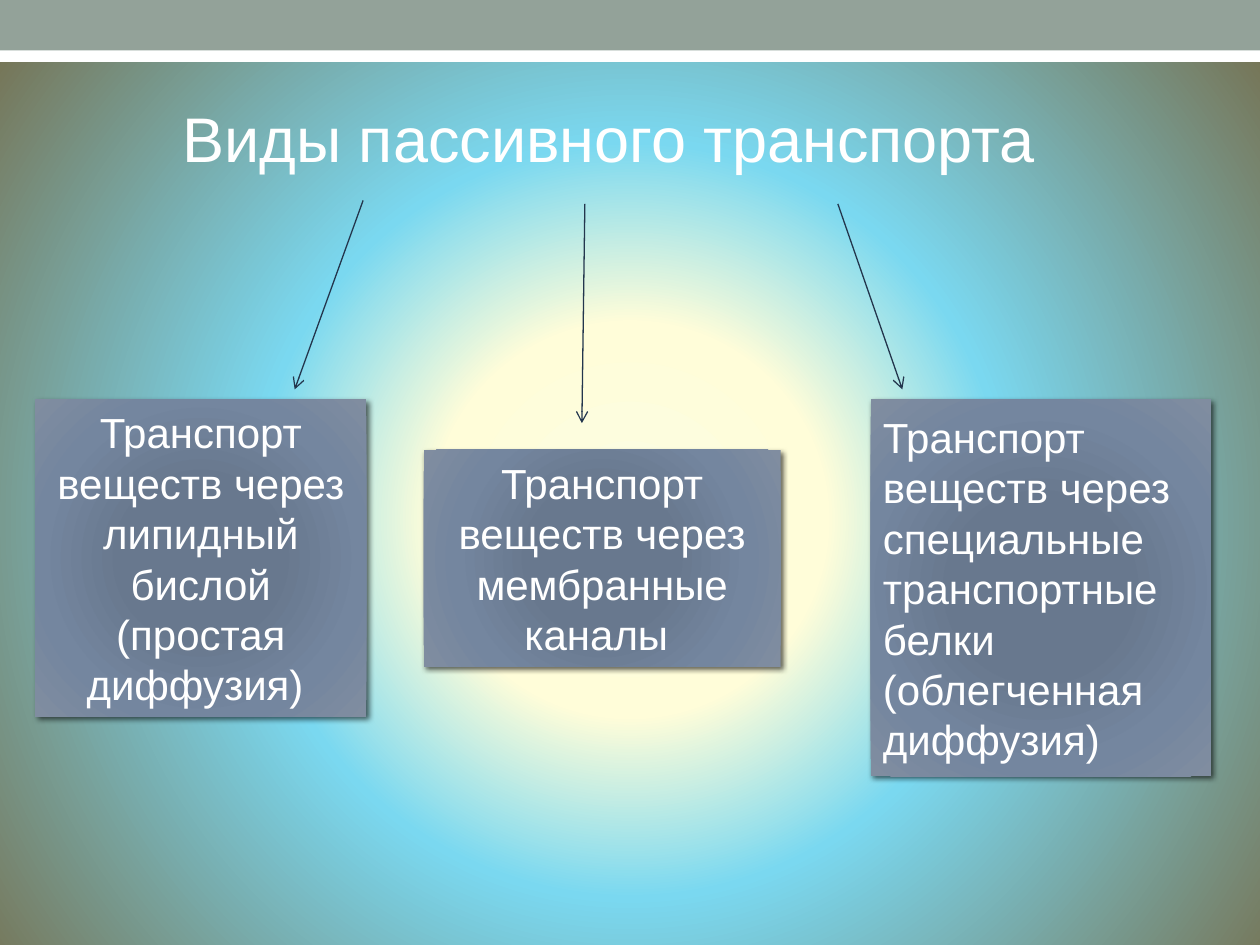
from lxml.etree import SubElement
from pptx import Presentation
from pptx.dml.color import RGBColor
from pptx.enum.shapes import MSO_CONNECTOR as Connector, MSO_SHAPE as Shape
from pptx.enum.text import MSO_AUTO_SIZE as AutoSize, PP_ALIGN as Align
from pptx.oxml.ns import qn
from pptx.util import Cm, Pt

WIDTH, HEIGHT = 25.4, 19.05


def color(hex_value):
    return RGBColor.from_string(hex_value)


def add_element(parent, tag, **attributes):
    return SubElement(parent, qn(tag), {k: str(v) for k, v in attributes.items()})


def radial_gradient(owner, fill, stops, focus):
    """Give the owner's fill a circular gradient around the focus rectangle."""
    fill.gradient()
    gradient = owner.element.find(".//" + qn("a:gradFill"))
    for child in list(gradient):
        gradient.remove(child)
    stop_list = add_element(gradient, "a:gsLst")
    for position, hex_value in stops:
        stop = add_element(stop_list, "a:gs", pos=position * 1000)
        add_element(stop, "a:srgbClr", val=hex_value)
    circle = add_element(gradient, "a:path", path="circle")
    sides = {side: value * 1000 for side, value in zip("ltrb", focus)}
    add_element(circle, "a:fillToRect", **sides)


class Deck:
    font = "Arial"
    text_color = "FFFFFF"
    arrow_color = "23364D"
    background_stops = [(0, "FBFDE3"), (25, "FFFDD9"), (48, "7AD8F0"), (100, "767455")]
    card_stops = [(0, "677790"), (34, "68788E"), (70, "74869F"), (100, "808DA0")]

    def __init__(self, presentation):
        self.slide = presentation.slides.add_slide(presentation.slide_layouts[6])

    def background(self):
        radial_gradient(self.slide, self.slide.background.fill,
                        self.background_stops, (10, 110, 10, 100))

    def rectangle(self, left, top, width, height):
        shape = self.slide.shapes.add_shape(
            Shape.RECTANGLE, Cm(left), Cm(top), Cm(width), Cm(height))
        shape.line.fill.background()
        shape.shadow.inherit = False
        return shape

    def band(self, top, height, hex_value):
        shape = self.rectangle(0, top, WIDTH, height)
        shape.fill.solid()
        shape.fill.fore_color.rgb = color(hex_value)

    def set_text(self, shape, text, size, align):
        frame = shape.text_frame
        frame.word_wrap = True
        frame.auto_size = AutoSize.SHAPE_TO_FIT_TEXT
        paragraph = frame.paragraphs[0]
        paragraph.text = text
        paragraph.alignment = align
        paragraph.font.name = self.font
        paragraph.font.size = Pt(size)
        paragraph.font.color.rgb = color(self.text_color)

    def title(self, left, top, width, height, text):
        box = self.slide.shapes.add_textbox(Cm(left), Cm(top), Cm(width), Cm(height))
        self.set_text(box, text, 36, Align.CENTER)

    def card(self, left, top, width, height, text, align=Align.CENTER):
        shape = self.rectangle(left, top, width, height)
        radial_gradient(shape, shape.fill, self.card_stops, (100,) * 4)
        effects = shape.element.spPr.find(qn("a:effectLst"))
        shadow = add_element(effects, "a:outerShdw", blurRad=Pt(3), dist=Pt(2),
                             dir=45 * 60000, algn="tl", rotWithShape=0)
        black = add_element(shadow, "a:srgbClr", val="000000")
        add_element(black, "a:alpha", val=60000)
        self.set_text(shape, text, 24, align)

    def arrow(self, start_x, start_y, end_x, end_y):
        connector = self.slide.shapes.add_connector(
            Connector.STRAIGHT, Cm(start_x), Cm(start_y), Cm(end_x), Cm(end_y))
        connector.line.color.rgb = color(self.arrow_color)
        connector.line.width = Pt(0.75)
        properties = connector.element.spPr
        add_element(properties.find(qn("a:ln")), "a:tailEnd", type="arrow")
        add_element(properties, "a:effectLst")


def main():
    presentation = Presentation()
    presentation.slide_width, presentation.slide_height = Cm(WIDTH), Cm(HEIGHT)
    deck = Deck(presentation)

    # Background and top bands
    deck.background()
    deck.band(0.61, 0.64, "FFFFFF")
    deck.band(0, 1.02, "93A299")

    # Title
    deck.title(2.7, 1.88, 19.5, 1.8, "Виды пассивного транспорта ")

    # Arrows from the title to the transport types
    deck.arrow(7.32, 4.04, 5.94, 7.85)
    deck.arrow(11.79, 4.11, 11.73, 8.53)
    deck.arrow(16.89, 4.11, 18.19, 7.85)

    # Transport types
    deck.card(0.71, 8.05, 6.68, 6.4,
              "Транспорт веществ через липидный бислой (простая диффузия) ")
    deck.card(8.54, 9.07, 7.2, 4.37, "Транспорт веществ через мембранные каналы ")
    deck.card(17.55, 8.05, 6.86, 7.6,
              "Транспорт веществ через специальные транспортные белки "
              "(облегченная диффузия)", Align.LEFT)

    presentation.save("out.pptx")


if __name__ == "__main__":
    main()
